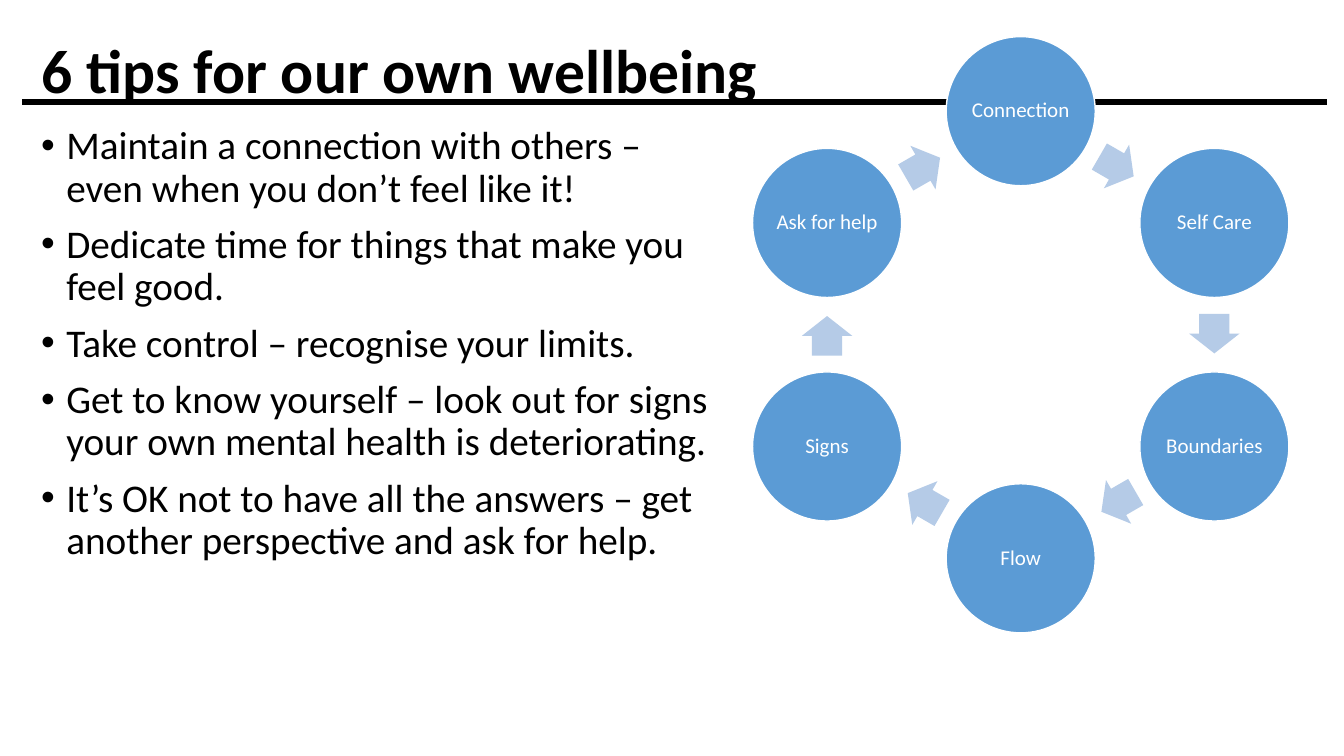
"""Build a slide with six wellbeing tips beside a cycle of linked circles."""
from dataclasses import dataclass
from math import cos, radians, sin

from lxml.etree import SubElement
from pptx import Presentation
from pptx.dml.color import RGBColor
from pptx.enum.shapes import MSO_CONNECTOR, MSO_SHAPE
from pptx.enum.text import MSO_ANCHOR, MSO_AUTO_SIZE, PP_ALIGN
from pptx.oxml.ns import qn
from pptx.slide import Slide
from pptx.text.text import TextFrame, _Paragraph
from pptx.util import Pt

BLACK = RGBColor(0x00, 0x00, 0x00)
WHITE = RGBColor(0xFF, 0xFF, 0xFF)
CIRCLE_BLUE = RGBColor(0x5B, 0x9B, 0xD5)
ARROW_BLUE = RGBColor(0xB5, 0xCB, 0xE7)
FONT = "Calibri"

CYCLE_X, CYCLE_Y, CYCLE_RADIUS = 729.1, 239.1, 159.7
CIRCLE_SIZE = 106.5
ARROW_LENGTH, ARROW_WIDTH = 28.3, 36
ARROW_SETBACK = 0.8

TIPS = (
    "Maintain a connection with others – even when you don’t feel like it!",
    "Dedicate time for things that make you feel good.",
    "Take control – recognise your limits.",
    "Get to know yourself – look out for signs your own mental health is deteriorating.",
    "It’s OK not to have all the answers – get another perspective and ask for help.",
)
TOPICS = ("Connection", "Self Care", "Boundaries", "Flow", "Signs", "Ask for help")


@dataclass(frozen=True)
class Step:
    """One topic of the cycle and its clockwise angle from the top."""
    topic: str
    angle: float


def add_run(paragraph: _Paragraph, text: str, size: float,
            color: RGBColor, bold: bool = False) -> None:
    """Append a styled run to a paragraph."""
    run = paragraph.add_run()
    run.text = text
    run.font.name = FONT
    run.font.size = Pt(size)
    run.font.bold = bold
    run.font.color.rgb = color


def add_text_area(slide: Slide, left: float, top: float,
                  width: float, height: float) -> TextFrame:
    """Add a wrapping text box and return its frame."""
    area = slide.shapes.add_textbox(Pt(left), Pt(top), Pt(width), Pt(height))
    area.text_frame.word_wrap = True
    return area.text_frame


def add_title(slide: Slide) -> None:
    """Add the heading and the rule that runs under it."""
    rule = slide.shapes.add_connector(
        MSO_CONNECTOR.STRAIGHT, Pt(15.8), Pt(72.9), Pt(948.2), Pt(72.9))
    rule.line.color.rgb = BLACK
    rule.line.width = Pt(4.5)
    SubElement(rule._element.spPr, qn("a:effectLst"))
    heading = add_text_area(slide, 22.3, 19.4, 938, 60.5)
    heading.auto_size = MSO_AUTO_SIZE.SHAPE_TO_FIT_TEXT
    add_run(heading.paragraphs[0], "6 tips for our own wellbeing", 44, BLACK, True)


def add_tips(slide: Slide) -> None:
    """Add the bulleted list of tips."""
    tips = add_text_area(slide, 22.3, 86.4, 498.2, 337)
    for index, tip in enumerate(TIPS):
        paragraph = tips.add_paragraph() if index else tips.paragraphs[0]
        properties = paragraph._p.get_or_add_pPr()
        properties.set("marL", str(Pt(18)))
        properties.set("indent", str(Pt(-18)))
        SubElement(properties, qn("a:buFont"), typeface="Arial")
        SubElement(properties, qn("a:buChar"), char="•")
        paragraph.line_spacing = 0.9
        paragraph.space_before = Pt(10 if index else 0)
        add_run(paragraph, tip, 28, BLACK)


def add_circle(slide: Slide, step: Step) -> None:
    """Add the labelled circle of a step."""
    x = CYCLE_X + CYCLE_RADIUS * sin(radians(step.angle))
    y = CYCLE_Y - CYCLE_RADIUS * cos(radians(step.angle))
    circle = slide.shapes.add_shape(
        MSO_SHAPE.OVAL, Pt(x - CIRCLE_SIZE / 2), Pt(y - CIRCLE_SIZE / 2),
        Pt(CIRCLE_SIZE), Pt(CIRCLE_SIZE))
    circle.shadow.inherit = False
    circle.fill.solid()
    circle.fill.fore_color.rgb = CIRCLE_BLUE
    circle.line.color.rgb = WHITE
    circle.line.width = Pt(1)
    label = circle.text_frame
    label.word_wrap = True
    label.vertical_anchor = MSO_ANCHOR.MIDDLE
    label.margin_left = label.margin_right = Pt(1.5)
    label.margin_top = label.margin_bottom = Pt(1.5)
    paragraph = label.paragraphs[0]
    paragraph.alignment = PP_ALIGN.CENTER
    paragraph.line_spacing = 0.9
    add_run(paragraph, step.topic, 15, WHITE)


def add_arrow(slide: Slide, step: Step) -> None:
    """Add the arrow leading from a step to the next one."""
    heading = step.angle + 30
    turn = radians(heading)
    reach = CYCLE_RADIUS * cos(radians(30))
    x = CYCLE_X + reach * sin(turn) - ARROW_SETBACK * cos(turn)
    y = CYCLE_Y - reach * cos(turn) - ARROW_SETBACK * sin(turn)
    arrow = slide.shapes.add_shape(
        MSO_SHAPE.RIGHT_ARROW, Pt(x - ARROW_LENGTH / 2), Pt(y - ARROW_WIDTH / 2),
        Pt(ARROW_LENGTH), Pt(ARROW_WIDTH))
    arrow.adjustments[0] = 0.6
    arrow.adjustments[1] = 0.5
    arrow.rotation = heading
    arrow.shadow.inherit = False
    arrow.fill.solid()
    arrow.fill.fore_color.rgb = ARROW_BLUE
    arrow.line.fill.background()


def main() -> None:
    """Assemble and save the slide."""
    deck = Presentation()
    deck.slide_width, deck.slide_height = Pt(960), Pt(540)
    slide = deck.slides.add_slide(deck.slide_layouts[6])
    add_title(slide)
    for index, topic in enumerate(TOPICS):
        step = Step(topic, index * 360 / len(TOPICS))
        add_circle(slide, step)
        add_arrow(slide, step)
    add_tips(slide)
    deck.save("out.pptx")


if __name__ == "__main__":
    main()
